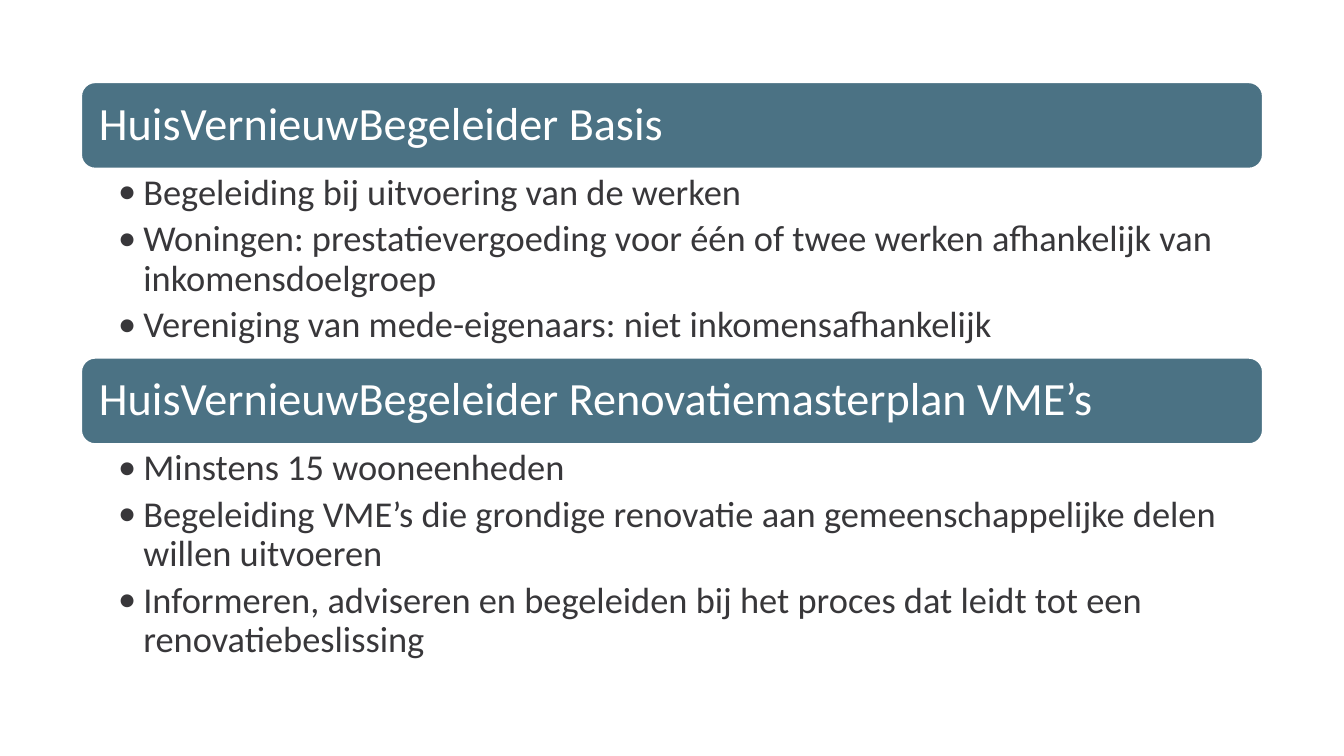
from dataclasses import dataclass

import lxml.etree
import pptx
import pptx.dml.color
import pptx.enum.shapes
import pptx.enum.text
import pptx.oxml.ns
import pptx.util

Pt = pptx.util.Pt
RGBColor = pptx.dml.color.RGBColor
Anchor = pptx.enum.text.MSO_ANCHOR


@dataclass(frozen=True)
class Theme:
    font: str = "Calibri"
    bar: RGBColor = RGBColor(0x4B, 0x72, 0x84)
    white: RGBColor = RGBColor(0xFF, 0xFF, 0xFF)
    body: RGBColor = RGBColor(0x38, 0x37, 0x3A)
    heading_size: float = 33
    body_size: float = 26


theme = Theme()


def write_text(shape, lines, *, size, color, insets, anchor, space_after=0, bullet_indent=0):
    """Fill a shape with paragraphs; insets are left, top, right, bottom."""
    frame = shape.text_frame
    frame.word_wrap = True
    frame.vertical_anchor = anchor
    (frame.margin_left, frame.margin_top,
     frame.margin_right, frame.margin_bottom) = map(Pt, insets)
    for index, line in enumerate(lines):
        paragraph = frame.paragraphs[0] if index == 0 else frame.add_paragraph()
        paragraph.alignment = pptx.enum.text.PP_ALIGN.LEFT
        paragraph.line_spacing = 0.9
        paragraph.space_after = Pt(space_after)
        run = paragraph.add_run()
        run.text = line
        run.font.name = theme.font
        run.font.size = Pt(size)
        run.font.color.rgb = color
        if bullet_indent:
            paragraph.level = 1
            properties = paragraph._p.get_or_add_pPr()
            properties.set("marL", str(Pt(bullet_indent)))
            properties.set("indent", str(-Pt(bullet_indent)))
            bullet_font = lxml.etree.SubElement(properties, pptx.oxml.ns.qn("a:buFont"))
            bullet_font.set("typeface", theme.font)
            bullet = lxml.etree.SubElement(properties, pptx.oxml.ns.qn("a:buChar"))
            bullet.set("char", "•")


presentation = pptx.Presentation()
presentation.slide_width = Pt(960)
presentation.slide_height = Pt(540)
slide = presentation.slides.add_slide(presentation.slide_layouts[6])

left, width = 57.6, 844.8
bar_height = 62.4
top = 58.4

# Heading, bullet lines, height of the bullet area
sections = [
    ("HuisVernieuwBegeleider Basis",
     ["Begeleiding bij uitvoering van de werken",
      "Woningen: prestatievergoeding voor één of twee werken afhankelijk van inkomensdoelgroep",
      "Vereniging van mede-eigenaars: niet inkomensafhankelijk"],
     134.4),
    ("HuisVernieuwBegeleider Renovatiemasterplan VME’s",
     ["Minstens 15 wooneenheden",
      "Begeleiding VME’s die grondige renovatie aan gemeenschappelijke delen willen uitvoeren",
      "Informeren, adviseren en begeleiden bij het proces dat leidt tot een renovatiebeslissing"],
     164),
]

for heading, bullets, body_height in sections:
    bar = slide.shapes.add_shape(
        pptx.enum.shapes.MSO_SHAPE.ROUNDED_RECTANGLE,
        Pt(left), Pt(top), Pt(width), Pt(bar_height))
    bar.shadow.inherit = False
    bar.fill.solid()
    bar.fill.fore_color.rgb = theme.bar
    bar.line.color.rgb = theme.white
    bar.line.width = Pt(2)
    write_text(bar, [heading], size=theme.heading_size, color=theme.white,
               insets=(10, 10, 10, 10), anchor=Anchor.MIDDLE)
    top += bar_height

    body = slide.shapes.add_textbox(Pt(left), Pt(top), Pt(width), Pt(body_height))
    write_text(body, bullets, size=theme.body_size, color=theme.body,
               insets=(26.8, 3.4, 18.8, 3.4), anchor=Anchor.TOP,
               space_after=5.2, bullet_indent=18)
    top += body_height

presentation.save("out.pptx")
